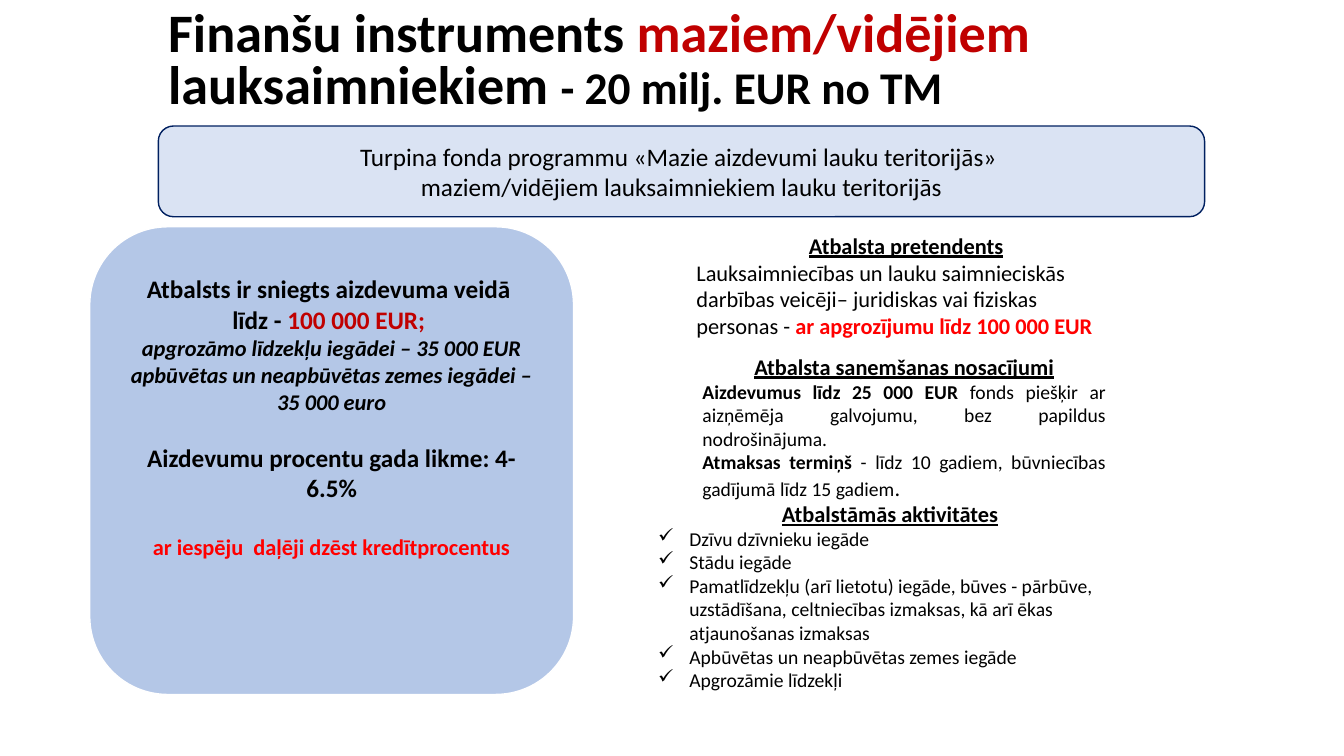
from dataclasses import dataclass

from lxml import etree
from pptx import Presentation
from pptx.dml.color import RGBColor
from pptx.enum.shapes import MSO_SHAPE
from pptx.enum.text import MSO_ANCHOR, PP_ALIGN
from pptx.oxml.ns import qn
from pptx.util import Emu, Inches, Pt

ROUNDED = MSO_SHAPE.ROUNDED_RECTANGLE
TOP, MIDDLE = MSO_ANCHOR.TOP, MSO_ANCHOR.MIDDLE
LEFT, CENTER, JUSTIFY = PP_ALIGN.LEFT, PP_ALIGN.CENTER, PP_ALIGN.JUSTIFY
SLIDE_W, SLIDE_H = Inches(13.333), Inches(7.5)


@dataclass(frozen=True)
class Theme:
    font: str = "Calibri"
    ink: str = "000000"
    accent: str = "C00000"
    alert: str = "FF0000"
    white: str = "FFFFFF"
    navy: str = "002060"
    panel: str = "B4C7E7"
    banner: str = "DAE3F3"
    title: float = 38.7
    subtitle: float = 32.4
    lead: float = 18
    head: float = 16
    body: float = 14


T = Theme()


@dataclass(frozen=True)
class Span:
    text: str
    size: float = T.head
    color: str = T.ink
    bold: bool = False
    italic: bool = False
    underline: bool = False


@dataclass(frozen=True)
class Para:
    spans: tuple[Span, ...]
    align: PP_ALIGN = LEFT
    before: float = 0
    spacing: float = 1
    bullet: str = ""


@dataclass(frozen=True)
class Block:
    """Text at left, top, width, height, each in percent of the slide."""
    box: tuple[float, float, float, float]
    paras: tuple[Para, ...]
    anchor: MSO_ANCHOR = TOP
    fill: str = ""
    line: str = ""
    inset_top: float = 0.05


def heading(text: str) -> Para:
    return Para((Span(text, bold=True, underline=True),), CENTER)


def centered(*spans: Span, before: float = 0) -> Para:
    return Para(spans, CENTER, before)


def check(text: str) -> Para:
    return Para((Span(text, T.body),), bullet="✓")


BLOCKS = (
    Block((11.78, 0, 85.72, 16.67), (
        Para((Span("Finanšu instruments ", T.title, bold=True),
              Span("maziem/vidējiem ", T.title, T.accent, bold=True),
              Span("lauksaimniekiem ", T.title, bold=True),
              Span("- 20 milj. EUR no TM", T.subtitle, bold=True)), spacing=0.8),
    ), MIDDLE),
    Block((51.53, 46, 31.5, 24.67), (
        heading("Atbalsta saņemšanas nosacījumi"),
        Para((Span("Aizdevumus līdz 25 000 EUR ", T.body, bold=True),
              Span("fonds piešķir ar aizņēmēja galvojumu, bez papildus nodrošinājuma. ",
                   T.body)), JUSTIFY),
        Para((Span("Atmaksas termiņš ", T.body, bold=True),
              Span("- līdz 10 gadiem, būvniecības gadījumā līdz 15 gadiem", T.body),
              Span(".")), JUSTIFY),
    )),
    Block((51.08, 30, 32.7, 15.73), (
        heading("Atbalsta pretendents"),
        Para((Span("Lauksaimniecības un lauku saimnieciskās darbības veicēji– "
                   "juridiskas vai fiziskas personas - "),
              Span("ar apgrozījumu līdz 100 000 EUR", color=T.alert, bold=True))),
    )),
    Block((48.23, 65.47, 36, 26.93), (
        heading("Atbalstāmās aktivitātes"),
        check("Dzīvu dzīvnieku iegāde"),
        check("Stādu iegāde"),
        check("Pamatlīdzekļu (arī lietotu) iegāde, būves - pārbūve, uzstādīšana, "
              "celtniecības izmaksas, kā arī ēkas atjaunošanas izmaksas"),
        check("Apbūvētas un neapbūvētas zemes iegāde"),
        check("Apgrozāmie līdzekļi"),
    )),
    Block((6.68, 30, 36, 61.87), (
        centered(Span("Atbalsts ir sniegts aizdevuma veidā \nlīdz - ", T.lead, bold=True),
                 Span("100 000 EUR; ", T.lead, T.accent, bold=True)),
        centered(Span("apgrozāmo līdzekļu iegādei – 35 000 EUR", bold=True, italic=True)),
        centered(Span("apbūvētas un neapbūvētas zemes iegādei – 35 000 euro",
                      bold=True, italic=True)),
        centered(Span("Aizdevumu procentu gada likme: 4-6.5%", T.lead, bold=True),
                 before=19.5),
        centered(Span("ar iespēju  daļēji dzēst kredītprocentus", color=T.alert, bold=True),
                 before=22),
    ), fill=T.panel, line=T.white, inset_top=0.24),
    Block((11.78, 16.67, 77.85, 12), (
        centered(Span("Turpina fonda programmu «Mazie aizdevumi lauku teritorijās» ", T.lead)),
        centered(Span("maziem/vidējiem lauksaimniekiem lauku teritorijās", T.lead)),
    ), MIDDLE, T.banner, T.navy),
)


def set_attrs(target: object, values: dict[str, object]) -> None:
    for name, value in values.items():
        setattr(target, name, value)


def add_span(p, span: Span) -> None:
    """Add a span's runs, with a line break at each newline."""
    for i, text in enumerate(span.text.split("\n")):
        if i:
            p.add_line_break()
        r = p.add_run()
        r.text = text
        set_attrs(r.font, {"name": T.font, "size": Pt(span.size), "bold": span.bold,
                           "italic": span.italic, "underline": span.underline})
        r.font.color.rgb = RGBColor.from_string(span.color)


def add_bullet(p, mark: str) -> None:
    pPr = p._p.get_or_add_pPr()
    pPr.set("marL", str(Inches(0.31)))
    pPr.set("indent", str(-Inches(0.31)))
    etree.SubElement(pPr, qn("a:buChar")).set("char", mark)


def add_block(s, block: Block) -> None:
    x, y, w, h = block.box
    place = [Emu(round(share * side / 100))
             for share, side in ((x, SLIDE_W), (y, SLIDE_H), (w, SLIDE_W), (h, SLIDE_H))]
    if block.fill:
        sp = s.shapes.add_shape(ROUNDED, *place)
        sp.shadow.inherit = False
        sp.fill.solid()
        sp.fill.fore_color.rgb = RGBColor.from_string(block.fill)
        sp.line.color.rgb = RGBColor.from_string(block.line)
        sp.line.width = Pt(1)
    else:
        sp = s.shapes.add_textbox(*place)
    tf = sp.text_frame
    set_attrs(tf, {"word_wrap": True, "vertical_anchor": block.anchor,
                   "margin_top": Inches(block.inset_top)})
    for i, para in enumerate(block.paras):
        p = tf.add_paragraph() if i else tf.paragraphs[0]
        set_attrs(p, {"alignment": para.align, "space_before": Pt(para.before),
                      "line_spacing": para.spacing})
        if para.bullet:
            add_bullet(p, para.bullet)
        for span in para.spans:
            add_span(p, span)


def main() -> None:
    prs = Presentation()
    set_attrs(prs, {"slide_width": SLIDE_W, "slide_height": SLIDE_H})
    s = prs.slides.add_slide(prs.slide_layouts[6])
    for block in BLOCKS:
        add_block(s, block)
    prs.save("out.pptx")


if __name__ == "__main__":
    main()
